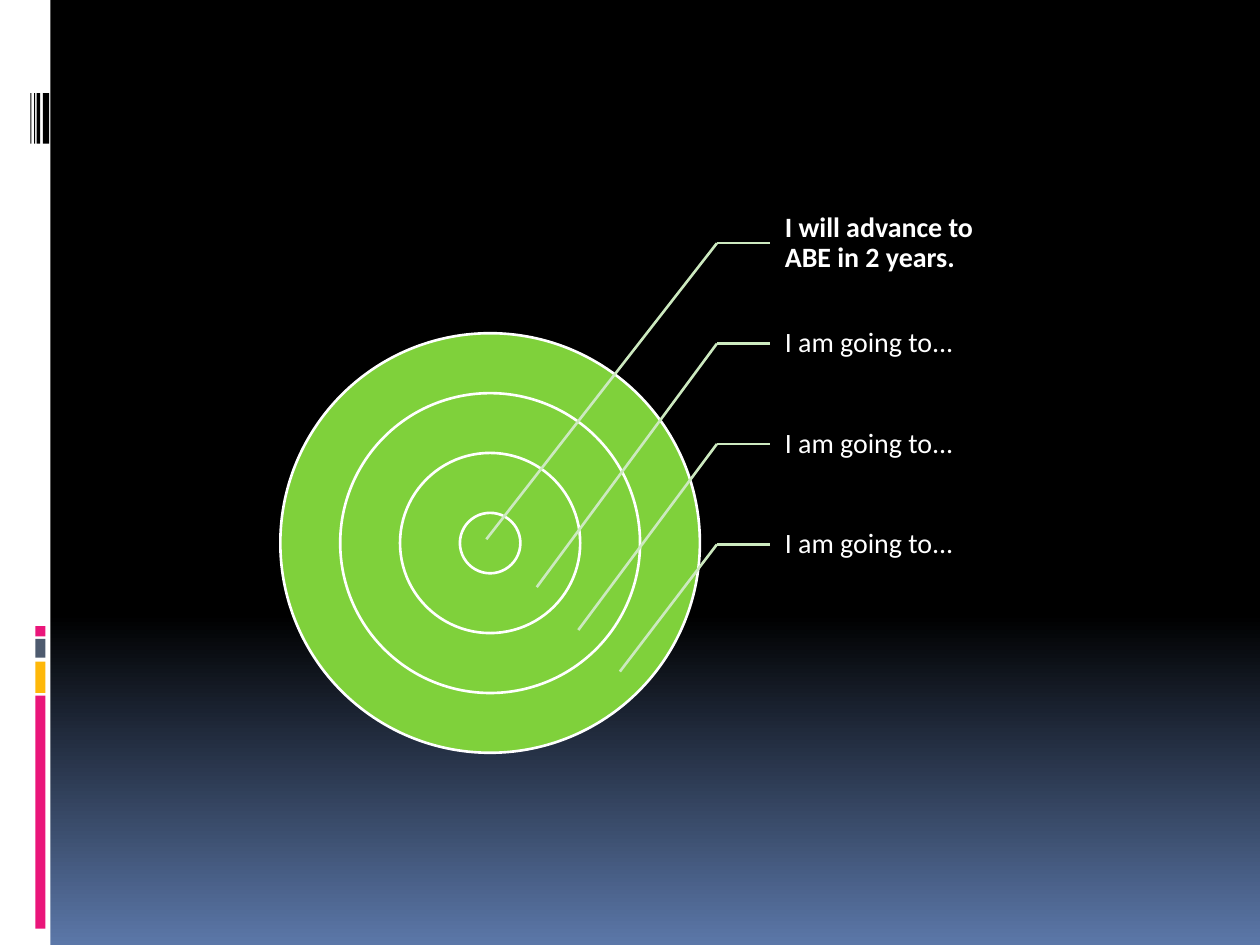
from copy import deepcopy
from dataclasses import dataclass

from pptx import Presentation
from pptx.dml.color import RGBColor
from pptx.enum.shapes import MSO_CONNECTOR, MSO_SHAPE
from pptx.enum.text import MSO_ANCHOR, PP_ALIGN
from pptx.oxml.ns import qn
from pptx.util import Inches, Pt
from lxml.etree import SubElement


@dataclass(frozen=True)
class Theme:
    white: str = "FFFFFF"
    black: str = "000000"
    dusk: str = "5B77A8"
    pink: str = "EA157A"
    amber: str = "FEB80A"
    slate: str = "4E5B6F"
    target: str = "7FD13B"
    leader: str = "CCE9BF"
    font: str = "Calibri"
    label_size: int = 16
    line_width: float = 1.5


THEME = Theme()

SIDEBAR = [
    (0, 0, 0.4, 7.5, THEME.white),
    (0.28, 5.52, 0.08, 1.85, THEME.pink),
    (0.28, 5.25, 0.08, 0.25, THEME.amber),
    (0.28, 5.07, 0.08, 0.15, THEME.slate),
    (0.28, 4.97, 0.08, 0.08, THEME.pink),
]
BARCODE = [(0.34, 0.05), (0.29, 0.03), (0.27, 0.01), (0.24, 0.01)]
BARCODE_TOP, BARCODE_HEIGHT = 0.74, 0.4

CENTER_X, CENTER_Y = 3.89, 4.31
BULLSEYE, RING_STEP, RING_COUNT = 0.48, 0.95, 4

LABEL_LEFT, LABEL_TOP, LABEL_WIDTH, LABEL_HEIGHT = 6.11, 1.53, 1.67, 0.8
LABEL_PITCH = 0.797
ELBOW_X = 5.69
GOALS = [
    ("I will advance to ABE in 2 years.", True, (3.86, 4.28)),
    ("I am going to...", False, (4.26, 4.66)),
    ("I am going to...", False, (4.59, 5)),
    ("I am going to...", False, (4.92, 5.33)),
]


def color(value):
    return RGBColor.from_string(value)


def paint_background(slide):
    fill = slide.background.fill
    fill.gradient()
    fill.gradient_angle = 270
    stop_list = slide.element.find(".//" + qn("a:gsLst"))
    stop_list.append(deepcopy(stop_list[-1]))
    shades = [(0, THEME.black), (0.65, THEME.black), (1, THEME.dusk)]
    for stop, (position, shade) in zip(fill.gradient_stops, shades):
        stop.position = position
        stop.color.rgb = color(shade)


def add_filled(slide, preset, left, top, width, height, fill, outline=None):
    figure = slide.shapes.add_shape(
        preset, Inches(left), Inches(top), Inches(width), Inches(height))
    figure.shadow.inherit = False
    figure.fill.solid()
    figure.fill.fore_color.rgb = color(fill)
    if outline:
        figure.line.color.rgb = color(outline)
        figure.line.width = Pt(THEME.line_width)
    else:
        figure.line.fill.background()


def add_ring(slide, diameter):
    add_filled(slide, MSO_SHAPE.OVAL, CENTER_X - diameter / 2,
               CENTER_Y - diameter / 2, diameter, diameter,
               THEME.target, THEME.white)


def add_label(slide, top, wording, bold):
    label = slide.shapes.add_textbox(
        Inches(LABEL_LEFT), Inches(top), Inches(LABEL_WIDTH), Inches(LABEL_HEIGHT))
    frame = label.text_frame
    frame.word_wrap = True
    frame.vertical_anchor = MSO_ANCHOR.MIDDLE
    frame.margin_left = Inches(0.12)
    frame.margin_top = frame.margin_right = frame.margin_bottom = Inches(0.02)
    paragraph = frame.paragraphs[0]
    paragraph.alignment = PP_ALIGN.LEFT
    paragraph.line_spacing = 0.9
    run = paragraph.add_run()
    run.text = wording
    run.font.name = THEME.font
    run.font.size = Pt(THEME.label_size)
    run.font.bold = bold
    run.font.color.rgb = color(THEME.white)
    return label


def add_leader(slide, start, end):
    leader = slide.shapes.add_connector(
        MSO_CONNECTOR.STRAIGHT, *(Inches(length) for length in (*start, *end)))
    leader.line.color.rgb = color(THEME.leader)
    leader.line.width = Pt(THEME.line_width)
    SubElement(leader.element.spPr, qn("a:effectLst"))
    return leader


def add_goal(slide, top, wording, bold, tip):
    label = add_label(slide, top, wording, bold)
    middle = top + LABEL_HEIGHT / 2
    elbow = (ELBOW_X, middle)
    add_leader(slide, elbow, (LABEL_LEFT, middle)).end_connect(label, 1)
    add_leader(slide, elbow, tip)


def main():
    deck = Presentation()
    deck.slide_width, deck.slide_height = Inches(10), Inches(7.5)
    slide = deck.slides.add_slide(deck.slide_layouts[6])
    paint_background(slide)
    for left, top, width, height, fill in SIDEBAR:
        add_filled(slide, MSO_SHAPE.RECTANGLE, left, top, width, height, fill)
    for left, width in BARCODE:
        add_filled(slide, MSO_SHAPE.RECTANGLE, left, BARCODE_TOP, width,
                   BARCODE_HEIGHT, THEME.black)
    for ring in reversed(range(RING_COUNT)):
        add_ring(slide, BULLSEYE + ring * RING_STEP)
    for row, (wording, bold, tip) in enumerate(GOALS):
        add_goal(slide, LABEL_TOP + row * LABEL_PITCH, wording, bold, tip)
    deck.save("out.pptx")


if __name__ == "__main__":
    main()
